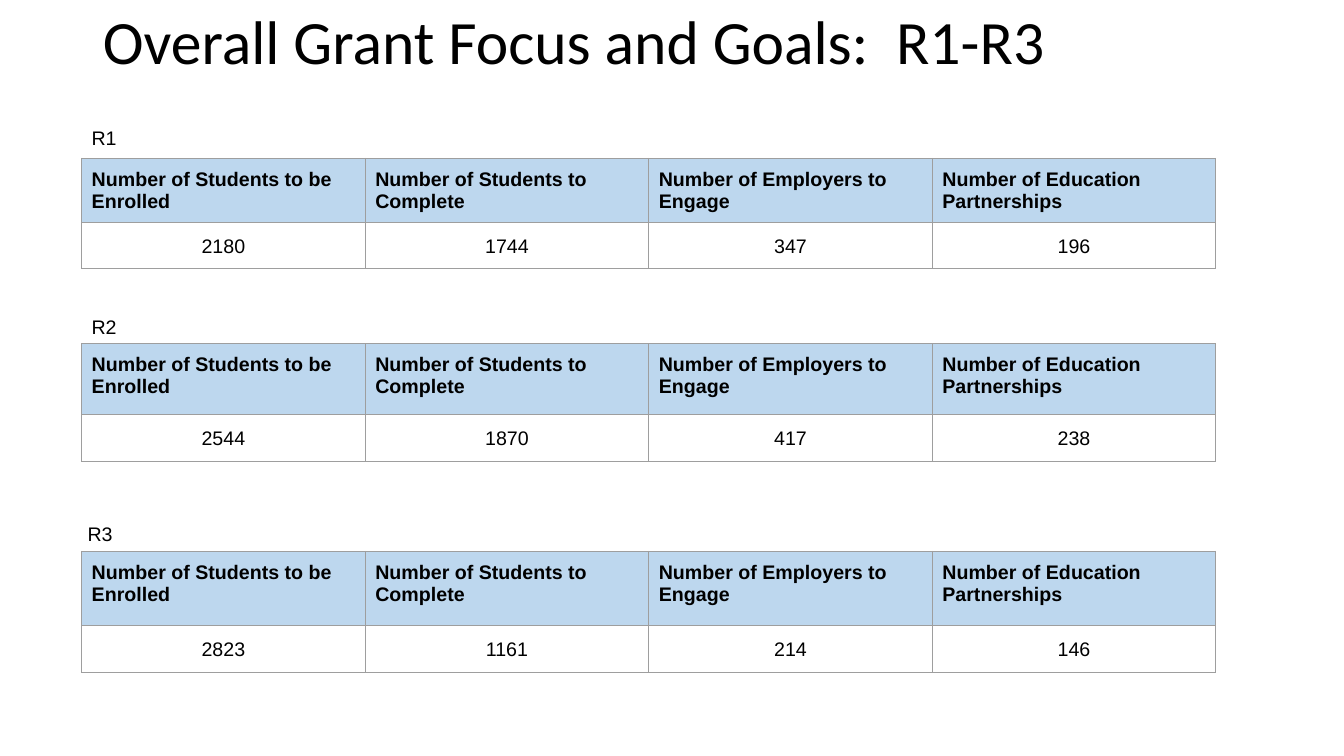
from lxml import etree
from pptx import Presentation
from pptx import util as u
from pptx.dml.color import RGBColor
from pptx.enum import text
from pptx.oxml.ns import qn

BLACK = RGBColor(0x00, 0x00, 0x00)
HEADER_BLUE = RGBColor(0xBD, 0xD7, 0xEE)
GRID_GREY = RGBColor(0x9E, 0x9E, 0x9E)

TITLE_FONT = {"name": "Calibri", "size": u.Pt(44), "bold": False}
BODY_FONT = {"name": "Arial", "size": u.Pt(14), "bold": False}
HEADER_FONT = {**BODY_FONT, "bold": True}

TITLE_BOX = (0.92, 0.05, 11.14, 0.79)
TABLE_LEFT, TABLE_WIDTH = 0.81, 11.25
VALUE_HEIGHT, LABEL_HEIGHT = 0.45, 0.34

GOALS = [
    "Number of Students to be Enrolled",
    "Number of Students to Complete",
    "Number of Employers to Engage",
    "Number of Education Partnerships",
]
# Round, goal values, table top, header height, label left, label width, label top
ROUNDS = [
    ("R1", [2180, 1744, 347, 196], 1.57, 0.64, 0.81, 0.89, 1.2),
    ("R2", [2544, 1870, 417, 238], 3.41, 0.7, 0.81, 0.81, 3.08),
    ("R3", [2823, 1161, 214, 146], 5.47, 0.73, 0.77, 0.89, 5.13),
]


def inches(*lengths):
    return [u.Inches(length) for length in lengths]


def write(paragraph, words, font_values, **paragraph_values):
    run = paragraph.add_run()
    run.text = words
    for key, value in font_values.items():
        setattr(run.font, key, value)
    run.font.color.rgb = BLACK
    for key, value in paragraph_values.items():
        setattr(paragraph, key, value)


def add_borders(cell):
    properties = cell._tc.get_or_add_tcPr()
    for side in ("lnL", "lnR", "lnT", "lnB"):
        line = etree.SubElement(properties, qn(f"a:{side}"), w=str(u.Pt(0.75)))
        fill = etree.SubElement(line, qn("a:solidFill"))
        etree.SubElement(fill, qn("a:srgbClr"), val=str(GRID_GREY))


def format_cell(cell, fill_color=None):
    for side in ("left", "right", "top", "bottom"):
        setattr(cell, f"margin_{side}", u.Inches(0.1))
    add_borders(cell)
    if fill_color is None:
        cell.fill.background()
    else:
        cell.fill.solid()
        cell.fill.fore_color.rgb = fill_color


def place_title(slide, box):
    title = slide.shapes.title
    for key, value in zip(("left", "top", "width", "height"), inches(*box)):
        setattr(title, key, value)
    title.text_frame.vertical_anchor = text.MSO_ANCHOR.MIDDLE
    write(title.text_frame.paragraphs[0], "Overall Grant Focus and Goals:  R1-R3",
          TITLE_FONT, alignment=text.PP_ALIGN.LEFT, line_spacing=0.9)


def add_round_label(slide, name, box):
    label = slide.shapes.add_textbox(*inches(*box)).text_frame
    label.word_wrap = True
    label.auto_size = text.MSO_AUTO_SIZE.SHAPE_TO_FIT_TEXT
    write(label.paragraphs[0], name, BODY_FONT)


def add_goal_table(slide, values, box, header_height):
    goals = slide.shapes.add_table(2, len(GOALS), *inches(*box)).table
    goals.horz_banding = False
    goals.rows[0].height, goals.rows[1].height = inches(header_height, VALUE_HEIGHT)
    for column, (goal, value) in enumerate(zip(GOALS, values)):
        header, count = goals.cell(0, column), goals.cell(1, column)
        format_cell(header, HEADER_BLUE)
        write(header.text_frame.paragraphs[0], goal, HEADER_FONT)
        format_cell(count)
        write(count.text_frame.paragraphs[0], str(value), BODY_FONT,
              alignment=text.PP_ALIGN.CENTER, line_spacing=1.15)


def main():
    deck = Presentation()
    deck.slide_width, deck.slide_height = inches(13.33, 7.5)
    slide = deck.slides.add_slide(deck.slide_layouts.get_by_name("Title Only"))

    # Heading
    place_title(slide, TITLE_BOX)

    # One labelled table for each grant round
    for name, values, top, header_height, label_left, label_width, label_top in ROUNDS:
        table_box = (TABLE_LEFT, top, TABLE_WIDTH, header_height + VALUE_HEIGHT)
        add_goal_table(slide, values, table_box, header_height)
        add_round_label(slide, name, (label_left, label_top, label_width, LABEL_HEIGHT))

    deck.save("out.pptx")


if __name__ == "__main__":
    main()
